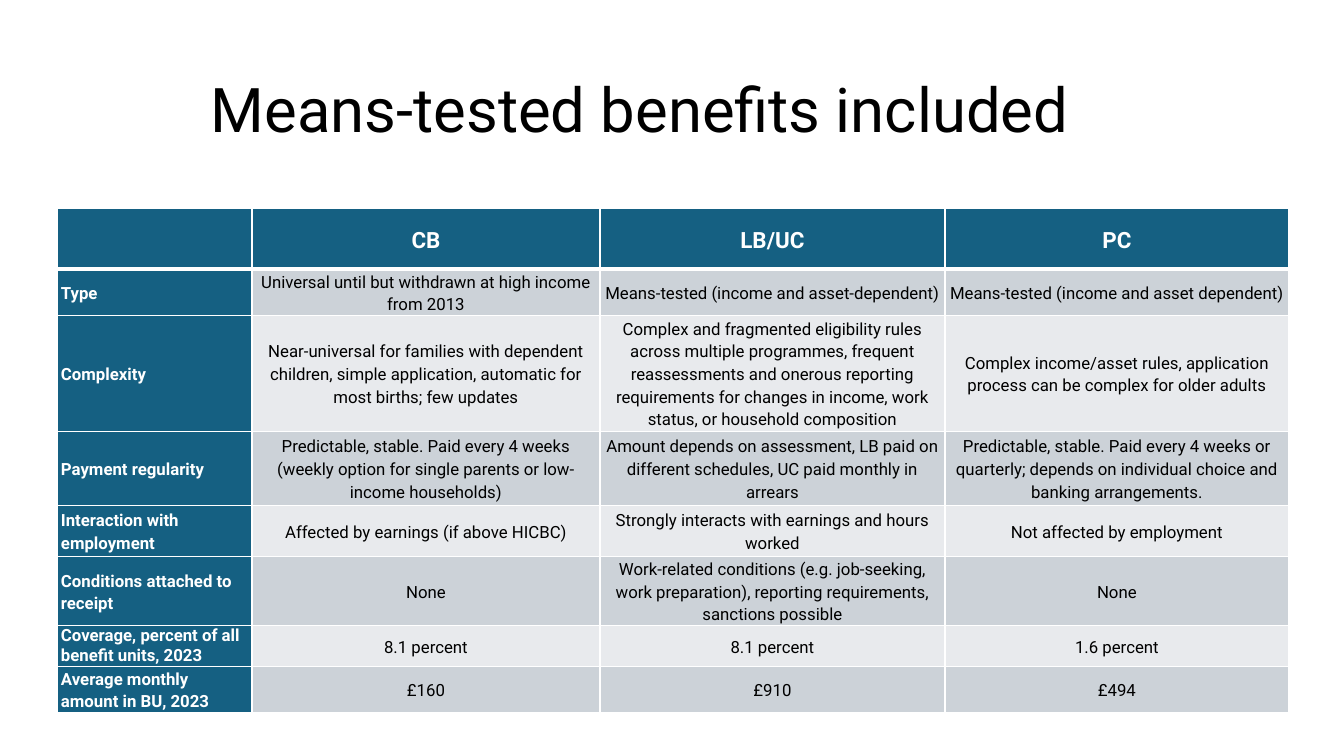
"""Build a slide with a table comparing means-tested benefits."""
from lxml import etree
from pptx import Presentation
from pptx.dml.color import RGBColor
from pptx.enum.text import MSO_ANCHOR, PP_ALIGN
from pptx.oxml.ns import qn
from pptx.util import Emu, Pt

MID = MSO_ANCHOR.MIDDLE
LEFT, CENTER = PP_ALIGN.LEFT, PP_ALIGN.CENTER

TITLE = "Means-tested benefits included"
ROWS = [
    ("", "CB", "LB/UC", "PC"),
    ("Type",
     "Universal until but withdrawn at high income from 2013",
     "Means-tested (income and asset-dependent)",
     "Means-tested (income and asset dependent)"),
    ("Complexity",
     "Near-universal for families with dependent children, simple application, "
     "automatic for most births; few updates",
     "Complex and fragmented eligibility rules across multiple programmes, "
     "frequent reassessments and onerous reporting requirements for changes in "
     "income, work status, or household composition",
     "Complex income/asset rules, application process can be complex for older adults"),
    ("Payment regularity",
     "Predictable, stable. Paid every 4 weeks (weekly option for single parents "
     "or low-income households)",
     "Amount depends on assessment, LB paid on different schedules, UC paid "
     "monthly in arrears",
     "Predictable, stable. Paid every 4 weeks or quarterly; depends on individual "
     "choice and banking arrangements."),
    ("Interaction with employment",
     "Affected by earnings (if above HICBC)",
     "Strongly interacts with earnings and hours worked",
     "Not affected by employment"),
    ("Conditions attached to receipt",
     "None",
     "Work-related conditions (e.g. job-seeking, work preparation), reporting "
     "requirements, sanctions possible",
     "None"),
    ("Coverage, percent of all benefit units, 2023",
     "8.1 percent", "8.1 percent", "1.6 percent"),
    ("Average monthly amount in BU, 2023", "£160", "£910", "£494"),
]
WIDTHS = [195, 348, 345, 344]
HEIGHTS = [61, 45, 113, 74, 51, 67, 40, 45]
TIGHT = 6
FONT = "Roboto"
BLUE, WHITE, BLACK = "156082", "FFFFFF", "000000"
BANDS = ["E8EAED", "CCD2D8"]


def px(n):
    return Emu(round(n * 914400 / 100.8))


def color(code):
    return RGBColor.from_string(code)


def write(frame, text, size, tint, bold, align, space):
    frame.text = text
    frame.word_wrap = True
    para = frame.paragraphs[0]
    para.alignment = align
    para.line_spacing = space
    for run in para.runs:
        font = run.font
        font.name, font.size, font.bold = FONT, Pt(size), bold
        font.color.rgb = color(tint)
    return para


def border(cell, row):
    props = cell._tc.get_or_add_tcPr()
    thick = {"lnB": 0, "lnT": 1}
    for side in ("lnL", "lnR", "lnT", "lnB"):
        wide = 3 if thick.get(side) == row else 1
        line = etree.SubElement(props, qn("a:" + side), w=str(Pt(wide)))
        fill = etree.SubElement(line, qn("a:solidFill"))
        etree.SubElement(fill, qn("a:srgbClr"), val=WHITE)


def fill_cell(cell, text, row, col):
    border(cell, row)
    head = row == 0 or col == 0
    cell.fill.solid()
    cell.fill.fore_color.rgb = color(BLUE if head else BANDS[row % 2])
    cell.vertical_anchor = MID
    cell.margin_left = cell.margin_right = px(4)
    cell.margin_top = cell.margin_bottom = 0
    tight = row == TIGHT and col == 0
    para = write(cell.text_frame, text, 12 if row else 16,
                 WHITE if head else BLACK, head,
                 CENTER if col else LEFT, 1.0 if tight else 1.15)
    para.space_after = Pt(0 if tight else 6)


def main():
    deck = Presentation()
    deck.slide_width, deck.slide_height = px(1344), px(756)
    slide = deck.slides.add_slide(deck.slide_layouts[6])

    title = slide.shapes.add_textbox(px(201), px(40), px(1051), px(146))
    title.text_frame.vertical_anchor = MID
    write(title.text_frame, TITLE, 44, BLACK, False, LEFT, 0.9)

    table = slide.shapes.add_table(
        len(ROWS), len(WIDTHS), px(57), px(208),
        px(sum(WIDTHS)), px(sum(HEIGHTS))).table
    for col, wide in enumerate(WIDTHS):
        table.columns[col].width = px(wide)
    for row, (high, texts) in enumerate(zip(HEIGHTS, ROWS)):
        table.rows[row].height = px(high)
        for col, text in enumerate(texts):
            fill_cell(table.cell(row, col), text, row, col)

    deck.save("out.pptx")


if __name__ == "__main__":
    main()
